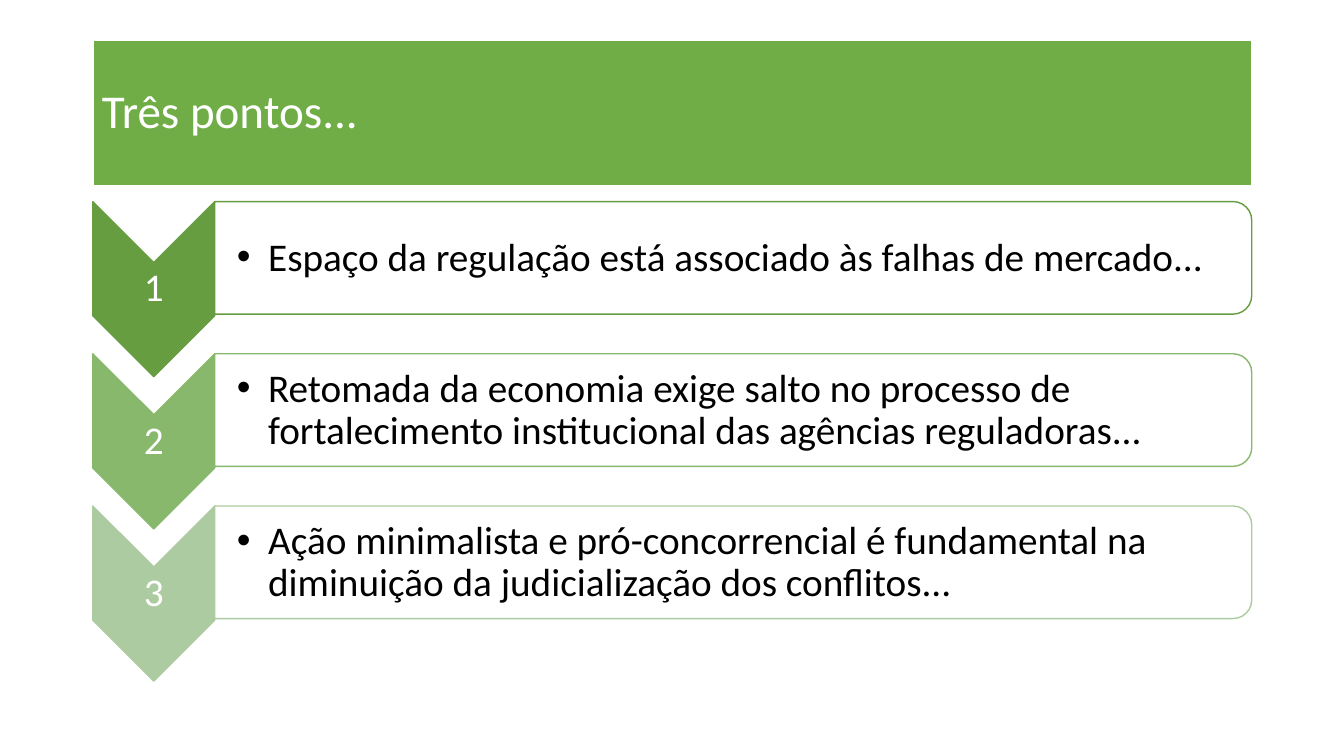
from dataclasses import dataclass
from lxml.etree import SubElement
from pptx import Presentation
from pptx.dml.color import RGBColor
from pptx.enum.shapes import MSO_SHAPE
from pptx.enum.text import MSO_ANCHOR, MSO_AUTO_SIZE, PP_ALIGN
from pptx.oxml.ns import qn
from pptx.util import Inches, Pt


@dataclass(frozen=True)
class Theme:
    font: str = "Calibri"
    head: float = 33.6
    text: float = 28
    white: str = "FFFFFF"
    black: str = "000000"
    green: str = "70AD47"
    steps: tuple = ("669D40", "87B86B", "ADCBA0")


THEME = Theme()
LEFT, TOP = 0.92, 2.0
COL, ROW = 1.21, 1.51
POINTS = (
    "Espaço da regulação está associado às falhas de mercado...",
    "Retomada da economia exige salto no processo de fortalecimento "
    "institucional das agências reguladoras...",
    "Ação minimalista e pró-concorrencial é fundamental na diminuição "
    "da judicialização dos conflitos...",
)


def cell(col, row, wide, high):
    return (Inches(LEFT + col * COL), Inches(TOP + row * ROW),
            Inches(wide * COL), Inches(high * ROW))


def paint(shape, fill, line, width):
    shape.fill.solid()
    shape.fill.fore_color.rgb = RGBColor.from_string(fill)
    shape.line.color.rgb = RGBColor.from_string(line)
    shape.line.width = Pt(width)


def write(shape, text, size, color, align, pads):
    frame = shape.text_frame
    frame.word_wrap = True
    frame.auto_size = MSO_AUTO_SIZE.NONE
    frame.vertical_anchor = MSO_ANCHOR.MIDDLE
    frame.margin_left, frame.margin_right = map(Inches, pads[:2])
    frame.margin_top = frame.margin_bottom = Inches(pads[2])
    frame.text = text
    para = frame.paragraphs[0]
    para.alignment = align
    para.line_spacing = 0.9
    para.font.name = THEME.font
    para.font.size = Pt(size)
    para.font.color.rgb = RGBColor.from_string(color)
    return para


def turned(slide, kind, box, fill, line):
    x, y, wide, high = box
    shape = slide.shapes.add_shape(
        kind, x + (wide - high) // 2, y + (high - wide) // 2, high, wide)
    shape.rotation = 90
    shape.shadow.inherit = False
    paint(shape, fill, line, 1)


def label(slide, box, text, color, align, left):
    shape = slide.shapes.add_textbox(*box)
    return write(shape, text, THEME.text, color, align, (left, 0.02, 0.02))


def bullet(para):
    props = para._p.get_or_add_pPr()
    props.set("marL", str(Inches(0.31)))
    props.set("indent", str(-Inches(0.31)))
    SubElement(props, qn("a:buFont")).set("typeface", "Arial")
    SubElement(props, qn("a:buChar")).set("char", "•")


def title(slide, text):
    shape = slide.shapes.title
    shape.left, shape.top, shape.width, shape.height = cell(0, -1.06, 9.5, 0.96)
    paint(shape, THEME.green, THEME.white, 1.5)
    write(shape, text, THEME.head, THEME.white, PP_ALIGN.LEFT, (0.09, 0.09, 0.05))


def step(slide, row, text, tone):
    turned(slide, MSO_SHAPE.CHEVRON, cell(0, row, 1, 1.15), tone, tone)
    label(slide, cell(0, row + 0.4, 1, 0.35), str(row + 1),
          THEME.white, PP_ALIGN.CENTER, 0.02)
    turned(slide, MSO_SHAPE.ROUND_2_SAME_RECTANGLE,
           cell(1, row, 8.5, 0.74), THEME.white, tone)
    bullet(label(slide, cell(1, row + 0.04, 8.46, 0.67), text,
                 THEME.black, PP_ALIGN.LEFT, 0.22))


def main():
    deck = Presentation()
    deck.slide_width, deck.slide_height = Inches(13.33), Inches(7.5)
    slide = deck.slides.add_slide(deck.slide_layouts[5])
    title(slide, "Três pontos...")
    for row, (text, tone) in enumerate(zip(POINTS, THEME.steps)):
        step(slide, row, text, tone)
    deck.save("out.pptx")


if __name__ == "__main__":
    main()
